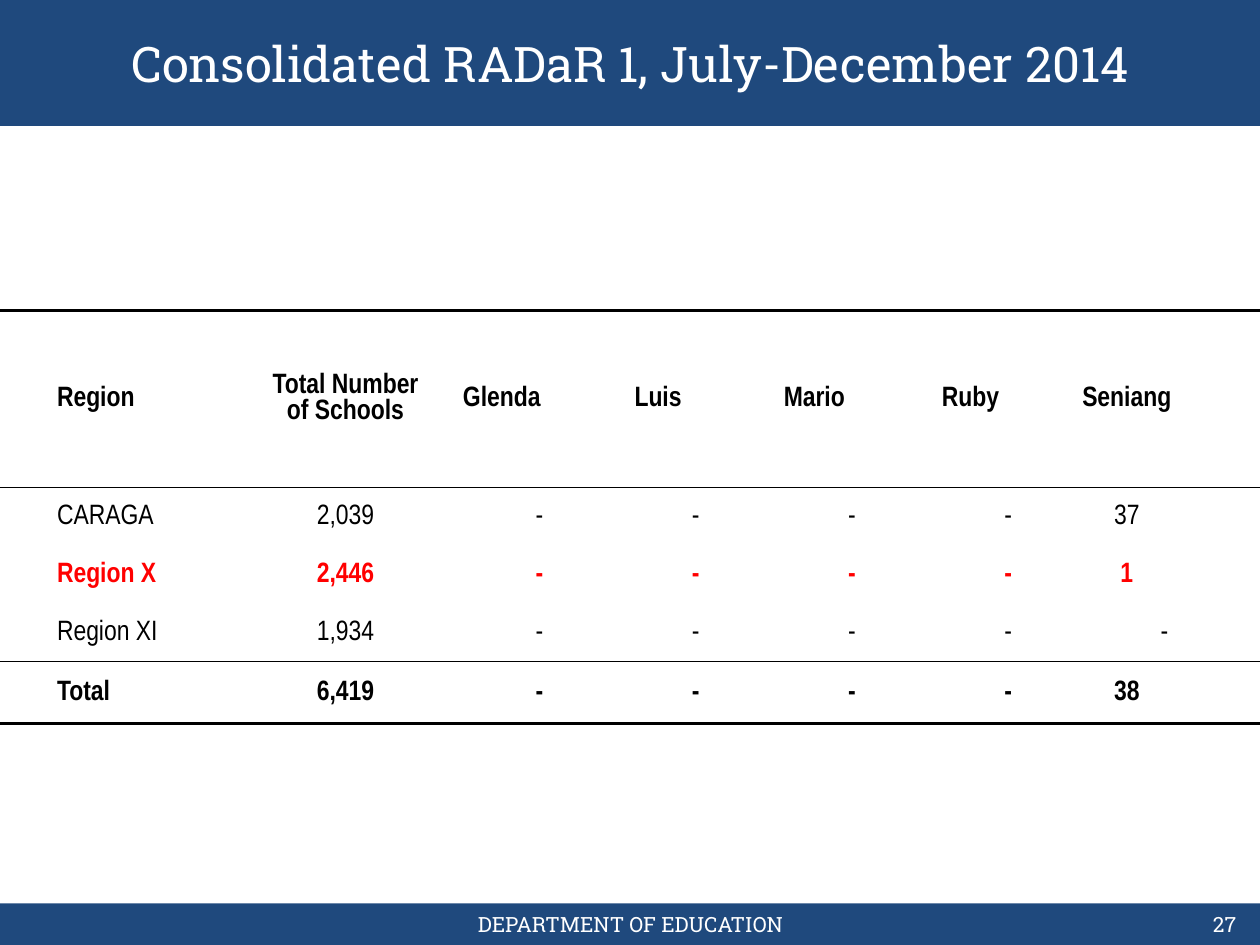
from dataclasses import dataclass

from lxml.etree import SubElement
from pptx import Presentation
from pptx.dml.color import RGBColor
from pptx.enum.shapes import MSO_SHAPE
from pptx.enum.text import MSO_ANCHOR, MSO_AUTO_SIZE, PP_ALIGN
from pptx.oxml.ns import qn
from pptx.util import Cm, Pt


@dataclass(frozen=True)
class Theme:
    blue: RGBColor = RGBColor(0x1F, 0x49, 0x7D)
    white: RGBColor = RGBColor(0xFF, 0xFF, 0xFF)
    black: RGBColor = RGBColor(0, 0, 0)
    red: RGBColor = RGBColor(0xFF, 0, 0)
    slab_font: str = "Roboto Slab"
    table_font: str = "Arial Narrow"
    title_size: float = 28
    footer_size: float = 12
    table_size: float = 16
    thick_line: float = 2
    thin_line: float = 0.5


@dataclass(frozen=True)
class Box:
    left: float
    top: float
    width: float
    height: float

    def lengths(self) -> tuple:
        return Cm(self.left), Cm(self.top), Cm(self.width), Cm(self.height)


@dataclass(frozen=True)
class TableRow:
    height: float
    values: tuple = ()
    bold: bool = False
    color: RGBColor = Theme.black
    line_above: float = 0
    line_below: float = 0


THEME = Theme()
HEADER_BAR = Box(0, 0, 25.4, 2.54)
FOOTER_BAR = Box(0, 18.21, 25.4, 0.84)
TITLE_BOX = Box(1.27, 0, 22.86, 2.54)
DEPARTMENT_BOX = Box(8.69, 18.21, 8.05, 0.84)
PAGE_NUMBER_BOX = Box(19.25, 18.21, 5.92, 0.84)
TABLE_BOX = Box(0, 5.08, 25.4, 9.52)

SPACER, DATA = 1.12, 3.15
COLUMN_WIDTHS = (SPACER, DATA, SPACER) + (DATA,) * 6 + (SPACER,)
DATA_COLUMNS = [1, 3, 4, 5, 6, 7, 8]
DASH = "-"
DASH_MARGIN = 0.74
CELL_MARGIN = 0.03

ROWS = [
    TableRow(1.17, line_below=THEME.thick_line),
    TableRow(3.58, ("Region", "Total Number of Schools", "Glenda", "Luis", "Mario", "Ruby", "Seniang"),
             bold=True, line_above=THEME.thick_line, line_below=THEME.thin_line),
    TableRow(1.17, ("CARAGA", "2,039", DASH, DASH, DASH, DASH, "37"), line_above=THEME.thin_line),
    TableRow(1.17, ("Region X", "2,446", DASH, DASH, DASH, DASH, "1"), bold=True, color=THEME.red),
    TableRow(1.17, ("Region XI", "1,934", DASH, DASH, DASH, DASH, DASH), line_below=THEME.thin_line),
    TableRow(1.24, ("Total", "6,419", DASH, DASH, DASH, DASH, "38"), bold=True,
             line_above=THEME.thin_line, line_below=THEME.thick_line),
]


def add_bar(slide, box: Box) -> None:
    bar = slide.shapes.add_shape(MSO_SHAPE.RECTANGLE, *box.lengths())
    bar.shadow.inherit = False
    bar.fill.solid()
    bar.fill.fore_color.rgb = THEME.blue
    bar.line.fill.background()


def format_font(paragraph, name: str, size: float, color: RGBColor, bold: bool = False) -> None:
    for run in paragraph.runs:
        run.font.name = name
        run.font.size = Pt(size)
        run.font.bold = bold
        run.font.color.rgb = color


def set_bar_text(shape, text: str, size: float, alignment: PP_ALIGN) -> None:
    """Put white slab text, vertically centred, in a shape lying on a bar."""
    text_frame = shape.text_frame
    text_frame.text = text
    text_frame.word_wrap = True
    text_frame.auto_size = MSO_AUTO_SIZE.NONE
    text_frame.vertical_anchor = MSO_ANCHOR.MIDDLE
    paragraph = text_frame.paragraphs[0]
    paragraph.alignment = alignment
    format_font(paragraph, THEME.slab_font, size, THEME.white)


def add_title(slide, text: str) -> None:
    title = slide.shapes.title
    title.left, title.top, title.width, title.height = TITLE_BOX.lengths()
    set_bar_text(title, text, THEME.title_size, PP_ALIGN.CENTER)
    slide.shapes._spTree.append(title._element)  # in front of the bar


def add_footer_text(slide, box: Box, text: str, alignment: PP_ALIGN) -> None:
    text_box = slide.shapes.add_textbox(*box.lengths())
    set_bar_text(text_box, text, THEME.footer_size, alignment)


def set_borders(cell, above: float, below: float) -> None:
    """Set line widths in points; a width of 0 means no line."""
    properties = cell._tc.get_or_add_tcPr()
    edges = (("a:lnL", 0), ("a:lnR", 0), ("a:lnT", above), ("a:lnB", below))
    for position, (tag, width) in enumerate(edges):
        line = SubElement(properties, qn(tag), w=str(Pt(width)))
        if width:
            fill = SubElement(line, qn("a:solidFill"))
            SubElement(fill, qn("a:srgbClr"), val=str(THEME.black))
        else:
            SubElement(line, qn("a:noFill"))
        properties.insert(position, line)


def fill_cell(cell, text: str, row: TableRow, alignment: PP_ALIGN) -> None:
    cell.text_frame.text = text
    paragraph = cell.text_frame.paragraphs[0]
    paragraph.alignment = alignment
    if text == DASH:
        paragraph.alignment = PP_ALIGN.RIGHT
        cell.margin_right = Cm(DASH_MARGIN)
    format_font(paragraph, THEME.table_font, THEME.table_size, row.color, row.bold)


def add_region_table(slide) -> None:
    frame = slide.shapes.add_table(len(ROWS), len(COLUMN_WIDTHS), *TABLE_BOX.lengths())
    table = frame.table
    table.first_row = table.horz_banding = False
    for column, width in zip(table.columns, COLUMN_WIDTHS):
        column.width = Cm(width)
    for table_row, row in zip(table.rows, ROWS):
        table_row.height = Cm(row.height)
        for cell in table_row.cells:
            cell.fill.background()
            cell.vertical_anchor = MSO_ANCHOR.MIDDLE
            cell.margin_left = cell.margin_right = cell.margin_top = Cm(CELL_MARGIN)
            cell.margin_bottom = 0
            set_borders(cell, row.line_above, row.line_below)
        for column_index, text in zip(DATA_COLUMNS, row.values):
            is_region = column_index == DATA_COLUMNS[0]
            alignment = PP_ALIGN.LEFT if is_region else PP_ALIGN.CENTER
            fill_cell(table_row.cells[column_index], text, row, alignment)
    table.cell(0, 0).merge(table.cell(0, len(COLUMN_WIDTHS) - 1))


def main() -> None:
    presentation = Presentation()
    presentation.slide_width, presentation.slide_height = Cm(25.4), Cm(19.05)
    slide = presentation.slides.add_slide(presentation.slide_layouts[5])
    add_bar(slide, FOOTER_BAR)
    add_bar(slide, HEADER_BAR)
    add_footer_text(slide, DEPARTMENT_BOX, "DEPARTMENT OF EDUCATION", PP_ALIGN.CENTER)
    add_title(slide, "Consolidated RADaR 1, July-December 2014")
    add_footer_text(slide, PAGE_NUMBER_BOX, "27", PP_ALIGN.RIGHT)
    add_region_table(slide)
    presentation.save("out.pptx")


if __name__ == "__main__":
    main()
